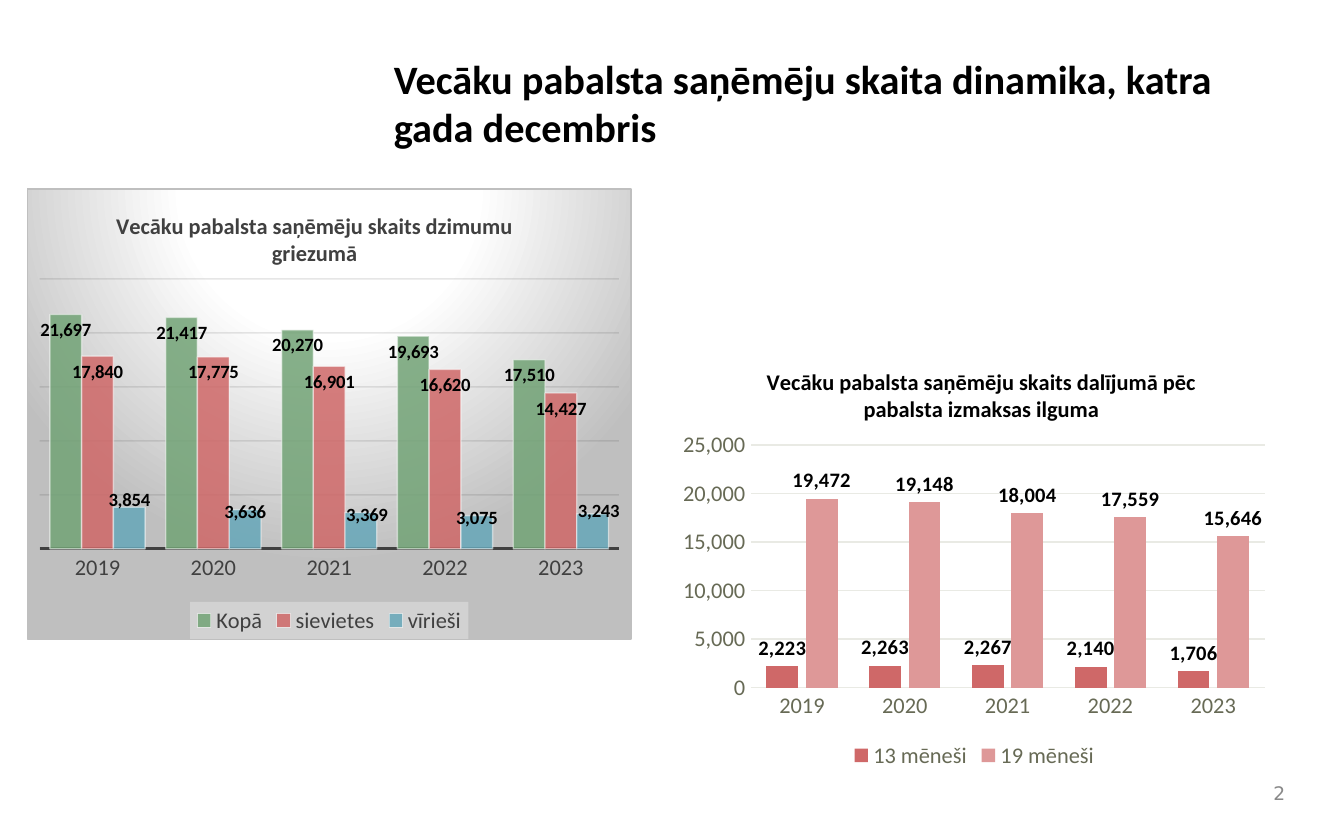
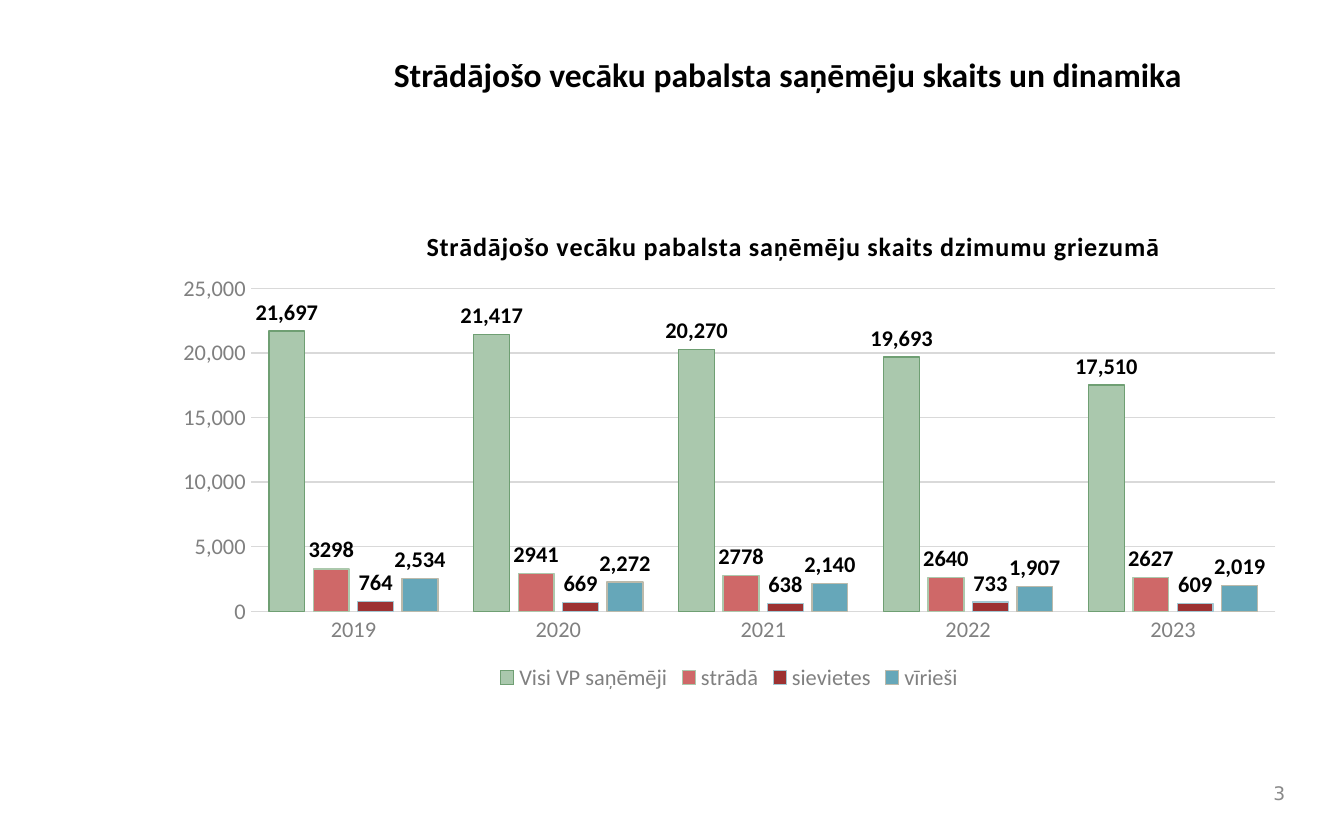
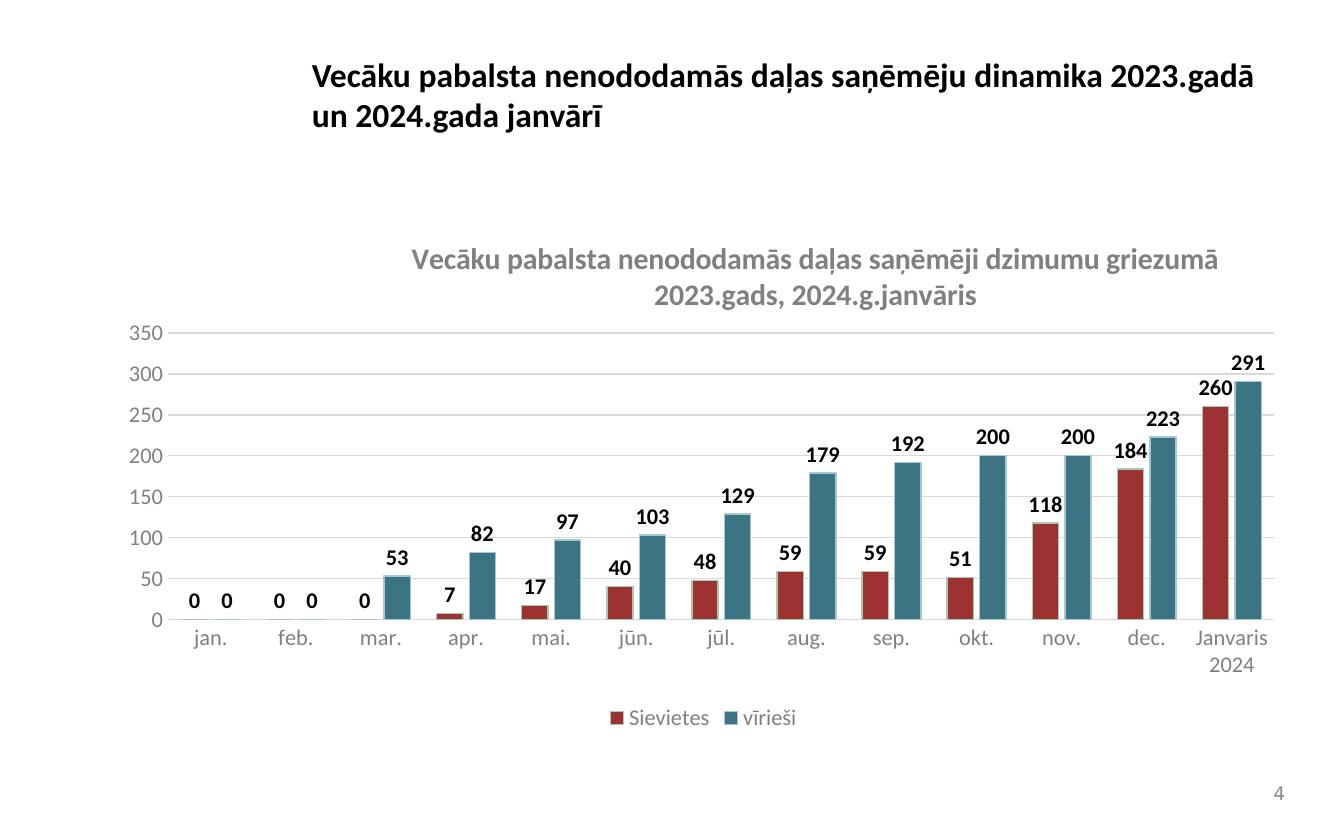
from dataclasses import dataclass
from typing import Optional

from pptx import Presentation
from pptx.chart.data import CategoryChartData
from pptx.dml.color import RGBColor
from pptx.enum.chart import XL_CHART_TYPE as ChartType
from pptx.enum.chart import XL_LABEL_POSITION as LabelPos
from pptx.enum.chart import XL_LEGEND_POSITION as LegendPos
from pptx.enum.chart import XL_TICK_MARK as Tick
from pptx.enum.text import MSO_ANCHOR as Anchor
from pptx.enum.text import MSO_AUTO_SIZE as AutoSize
from pptx.enum.text import PP_ALIGN as Align
from pptx.oxml import parse_xml
from pptx.oxml.ns import nsdecls, qn
from pptx.util import Inches, Pt

BLACK = RGBColor(0x00, 0x00, 0x00)
WHITE = RGBColor(0xFF, 0xFF, 0xFF)
DARK_GRAY = RGBColor(0x40, 0x40, 0x40)
GRAY = RGBColor(0x80, 0x80, 0x80)
NUMBER_GRAY = RGBColor(0x89, 0x89, 0x89)
LIGHT_GRAY = RGBColor(0xD9, 0xD9, 0xD9)
GRID_DARK = RGBColor(0x0D, 0x0D, 0x0D)
OLIVE = RGBColor(0x67, 0x6A, 0x55)
PALE_OLIVE = RGBColor(0xE9, 0xEA, 0xE4)
SAND = RGBColor(0xBC, 0xBA, 0xAB)
GREEN = RGBColor(0x72, 0xA3, 0x76)
GREEN_EDGE = RGBColor(0x6F, 0x9F, 0x73)
LIGHT_GREEN = RGBColor(0xAA, 0xC8, 0xAD)
PALE_GREEN = RGBColor(0xAC, 0xC8, 0xAC)
RED = RGBColor(0xCF, 0x68, 0x68)
PINK = RGBColor(0xDE, 0x98, 0x98)
DARK_RED = RGBColor(0x9D, 0x32, 0x32)
BLUE = RGBColor(0x66, 0xA7, 0xB9)
PALE_BLUE = RGBColor(0xA4, 0xC8, 0xD2)
DARK_BLUE = RGBColor(0x3C, 0x74, 0x83)

FONT = "Calibri"
NUMBER_FONT = "DejaVu Sans"
THOUSANDS = "#,##0"
GENERAL = "General"
YEARS = ["2019", "2020", "2021", "2022", "2023"]
MONTHS = ["jan.", "feb.", "mar.", "apr.", "mai.", "jūn.", "jūl.", "aug.",
          "sep.", "okt.", "nov.", "dec.", "Janvaris 2024"]
TOTAL = [21697, 21417, 20270, 19693, 17510]


@dataclass
class Series:
    name: str
    values: list
    color: RGBColor
    edge: Optional[RGBColor] = None
    number_format: str = THOUSANDS


@dataclass
class Style:
    """Text and line colours of a chart, and the look of its bars."""
    text: RGBColor
    title: RGBColor
    grid: RGBColor
    title_size: int
    label_size: int = 12
    label_pos: LabelPos = LabelPos.OUTSIDE_END
    gap: int = 100
    overlap: int = -24


def set_font(font, size, color, bold=False, name=FONT):
    font.name = name
    font.size = Pt(size)
    font.bold = bold
    font.color.rgb = color


def set_line(line, color, width=0.75):
    line.color.rgb = color
    line.width = Pt(width)


def set_alpha(element, percent):
    for color in element.iter(qn("a:srgbClr")):
        color.append(parse_xml(f'<a:alpha {nsdecls("a")} val="{percent * 1000}"/>'))


def set_layout(parent, index, x, y, size=None):
    """Place a chart part by fractions of the chart's width and height."""
    for old in parent.findall(qn("c:layout")):
        parent.remove(old)
    tags = [("x", x), ("y", y)]
    head = ""
    if size:
        head = ('<c:layoutTarget val="inner"/>'
                '<c:xMode val="edge"/><c:yMode val="edge"/>')
        tags += [("w", size[0]), ("h", size[1])]
    elif parent.tag == qn("c:title"):
        head = '<c:xMode val="edge"/><c:yMode val="edge"/>'
    body = "".join(f'<c:{tag} val="{value}"/>' for tag, value in tags)
    parent.insert(index, parse_xml(
        f'<c:layout {nsdecls("c")}><c:manualLayout>{head}{body}'
        '</c:manualLayout></c:layout>'))


def add_slide(prs, number, title, box, size=18):
    slide = prs.slides.add_slide(prs.slide_layouts[5])
    sp = slide.shapes.title
    sp.left, sp.top, sp.width, sp.height = (Inches(v) for v in box)
    tf = sp.text_frame
    tf.word_wrap = True
    tf.auto_size = AutoSize.NONE
    tf.vertical_anchor = Anchor.TOP
    p = tf.paragraphs[0]
    p.alignment = Align.LEFT
    r = p.add_run()
    r.text = title
    set_font(r.font, size, BLACK, True)

    sp = slide.shapes.add_textbox(Inches(9.17), Inches(5.76), Inches(0.49), Inches(0.28))
    tf = sp.text_frame
    tf.word_wrap = True
    tf.vertical_anchor = Anchor.MIDDLE
    p = tf.paragraphs[0]
    p.alignment = Align.RIGHT
    r = p.add_run()
    r.text = str(number)
    set_font(r.font, 10, NUMBER_GRAY, name=NUMBER_FONT)
    return slide


def format_axes(chart, style, top, step, number_format):
    cat, val = chart.category_axis, chart.value_axis
    for axis in (cat, val):
        axis.major_tick_mark = axis.minor_tick_mark = Tick.NONE
        set_font(axis.tick_labels.font, 12, style.text)
    set_line(cat.format.line, style.grid)
    val.format.line.fill.background()
    val.minimum_scale, val.maximum_scale, val.major_unit = 0, top, step
    val.tick_labels.number_format = number_format
    val.tick_labels.number_format_is_linked = False
    val.has_major_gridlines = True
    set_line(val.major_gridlines.format.line, style.grid)


def format_series(ser, item, style):
    ser.invert_if_negative = False
    ser.format.fill.solid()
    ser.format.fill.fore_color.rgb = item.color
    if item.edge is not None:
        set_line(ser.format.line, item.edge)
    labels = ser.data_labels
    labels.show_value = True
    labels.position = style.label_pos
    labels.number_format = item.number_format
    labels.number_format_is_linked = False
    set_font(labels.font, style.label_size, BLACK, True)


def add_columns(slide, box, title, title_at, plot, cats, series, style,
                top=25000, step=5000, number_format=THOUSANDS):
    """Add a clustered column chart; plot is left, top, width, height in fractions."""
    data = CategoryChartData()
    data.categories = cats
    for item in series:
        data.add_series(item.name, item.values, item.number_format)
    chart = slide.shapes.add_chart(
        ChartType.COLUMN_CLUSTERED, *(Inches(v) for v in box), data).chart
    set_font(chart.font, 10, BLACK)

    chart.has_title = True
    r = chart.chart_title.text_frame.paragraphs[0].add_run()
    r.text = title
    set_font(r.font, style.title_size, style.title, True)
    set_layout(chart.chart_title._element, 1, *title_at)

    chart.has_legend = True
    chart.legend.position = LegendPos.BOTTOM
    chart.legend.include_in_layout = False
    set_font(chart.legend.font, 12, style.text)

    format_axes(chart, style, top, step, number_format)
    bars = chart.plots[0]
    bars.vary_by_categories = False
    bars.gap_width, bars.overlap = style.gap, style.overlap
    for ser, item in zip(bars.series, series):
        format_series(ser, item, style)
    set_layout(chart._chartSpace.find(qn("c:chart")).find(qn("c:plotArea")),
               0, *plot[:2], size=plot[2:])
    return chart


def shade_background(chart):
    """Give the chart a radial gradient, a border and a translucent legend box."""
    stops = "".join(
        f'<a:gs pos="{pos * 1000}"><a:srgbClr val="{color}"/></a:gs>'
        for pos, color in ((0, "FFFFFF"), (39, "FFFFFF"), (100, "BFBFBF")))
    chart._chartSpace.find(qn("c:chart")).addnext(parse_xml(
        f'<c:spPr {nsdecls("c", "a")}><a:gradFill><a:gsLst>{stops}</a:gsLst>'
        '<a:path path="circle"><a:fillToRect l="50000" t="-80000" r="50000" b="180000"/>'
        '</a:path></a:gradFill><a:ln w="9525"><a:solidFill><a:srgbClr val="BFBFBF"/>'
        '</a:solidFill></a:ln></c:spPr>'))
    chart.legend._element.find(qn("c:overlay")).addnext(parse_xml(
        f'<c:spPr {nsdecls("c", "a")}><a:solidFill><a:srgbClr val="F2F2F2">'
        '<a:alpha val="39000"/></a:srgbClr></a:solidFill></c:spPr>'))


def soften_bars(chart):
    for ser in chart.plots[0].series:
        props = ser._element.find(qn("c:spPr"))
        set_alpha(props.find(qn("a:solidFill")), 85)
        set_alpha(props.find(qn("a:ln")), 50)
    set_alpha(chart.value_axis._element.find(qn("c:majorGridlines")), 10)


def shift_labels(ser, style, shifts):
    for i, (dx, dy) in enumerate(shifts):
        label = ser.points[i].data_label
        set_font(label.font, style.label_size, BLACK, True)
        label.position = style.label_pos
        set_layout(ser.data_labels._element.findall(qn("c:dLbl"))[i], 1, dx, dy)


def add_gender_chart(slide):
    style = Style(DARK_GRAY, DARK_GRAY, GRID_DARK, 12, label_size=10,
                  label_pos=LabelPos.INSIDE_END, gap=65, overlap=0)
    chart = add_columns(
        slide, (0.2, 1.4, 4.5, 3.36),
        "Vecāku pabalsta saņēmēju skaits dzimumu griezumā", (0.14, 0.04),
        (0.02, 0.2, 0.96, 0.6), YEARS,
        [Series("Kopā", TOTAL, GREEN, WHITE),
         Series("sievietes", [17840, 17775, 16901, 16620, 14427], RED, WHITE),
         Series("vīrieši", [3854, 3636, 3369, 3075, 3243], BLUE, WHITE)],
        style)
    chart.value_axis.visible = False
    set_line(chart.category_axis.format.line, DARK_GRAY, 1.5)
    shade_background(chart)
    soften_bars(chart)
    shift_labels(chart.plots[0].series[2], style,
                 [(0, -0.05), (0, -0.03), (0.01, -0.03), (0, -0.03), (0.01, -0.04)])


def main():
    prs = Presentation()
    prs.slide_width, prs.slide_height = Inches(10), Inches(6.25)

    slide = add_slide(
        prs, 2, "Vecāku pabalsta saņēmēju skaita dinamika, katra gada decembris",
        (2.83, 0.35, 6.67, 0.85), 21.6)
    add_columns(
        slide, (5, 2.54, 4.5, 3.22),
        "Vecāku pabalsta saņēmēju skaits dalījumā pēc pabalsta izmaksas ilguma",
        (0.15, 0.05), (0.13, 0.24, 0.85, 0.56), YEARS,
        [Series("13 mēneši", [2223, 2263, 2267, 2140, 1706], RED),
         Series("19 mēneši", [19472, 19148, 18004, 17559, 15646], PINK)],
        Style(OLIVE, BLACK, PALE_OLIVE, 12, label_size=11))
    add_gender_chart(slide)

    slide = add_slide(
        prs, 3, "Strādājošo vecāku pabalsta saņēmēju skaits un dinamika",
        (2.83, 0.35, 6.46, 0.72))
    chart = add_columns(
        slide, (1.19, 1.48, 8.47, 3.7),
        "Strādājošo vecāku pabalsta saņēmēju skaits dzimumu griezumā",
        (0.23, 0.05), (0.08, 0.18, 0.9, 0.65), YEARS,
        [Series("Visi VP saņēmēji", TOTAL, LIGHT_GREEN, GREEN_EDGE),
         Series("strādā", [3298, 2941, 2778, 2640, 2627], RED, PALE_GREEN, GENERAL),
         Series("sievietes", [764, 669, 638, 733, 609], DARK_RED, PALE_BLUE, GENERAL),
         Series("vīrieši", [2534, 2272, 2140, 1907, 2019], BLUE, SAND)],
        Style(GRAY, BLACK, LIGHT_GRAY, 14))
    title_run = chart.chart_title.text_frame.paragraphs[0].runs[0]
    title_run.font._element.set("spc", "30")

    slide = add_slide(
        prs, 4,
        "Vecāku pabalsta nenododamās daļas saņēmēju dinamika 2023.gadā un 2024.gada janvārī",
        (2.22, 0.35, 7.28, 0.94))
    add_columns(
        slide, (0.81, 1.53, 8.85, 3.95),
        "Vecāku pabalsta nenododamās daļas saņēmēji dzimumu griezumā 2023.gads, 2024.g.janvāris",
        (0.25, 0.05), (0.05, 0.24, 0.93, 0.54), MONTHS,
        [Series("Sievietes", [0, 0, 0, 7, 17, 40, 48, 59, 59, 51, 118, 184, 260],
                DARK_RED, PALE_GREEN, GENERAL),
         Series("vīrieši", [0, 0, 53, 82, 97, 103, 129, 179, 192, 200, 200, 223, 291],
                DARK_BLUE, PALE_BLUE, GENERAL)],
        Style(GRAY, GRAY, LIGHT_GRAY, 16), top=350, step=50, number_format=GENERAL)

    prs.save("out.pptx")


if __name__ == "__main__":
    main()
